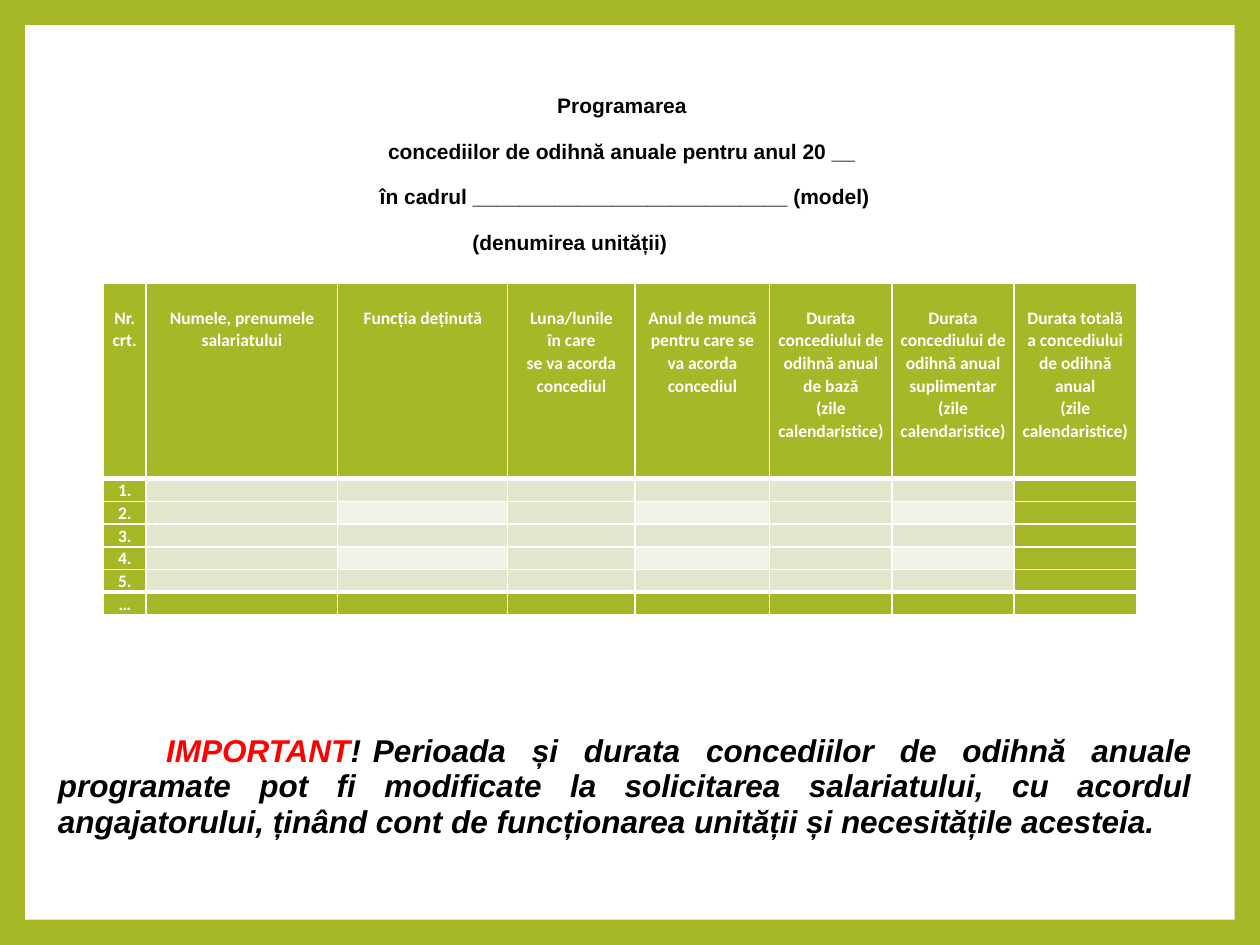
"""Build the annual leave schedule slide with its model table."""
from lxml import etree
from pptx import Presentation
from pptx.dml.color import RGBColor
from pptx.enum import shapes, text
from pptx.oxml import ns
from pptx.util import Inches, Pt

GREEN = RGBColor(0xA6, 0xB7, 0x27)
SAGE = RGBColor(0xE1, 0xE6, 0xCD)
PALE = RGBColor(0xF1, 0xF3, 0xE8)
WHITE = RGBColor(0xFF, 0xFF, 0xFF)
BLACK = RGBColor(0, 0, 0)
RED = RGBColor(0xFF, 0, 0)
CENTER = text.PP_ALIGN.CENTER


def write(para, content, font="Arial", size=12, color=BLACK, italic=False,
          align=CENTER, spacing=1.07, after=0):
    para.alignment = align
    para.line_spacing = spacing
    para.space_after = Pt(after)
    span = para.add_run()
    span.text = content
    span.font.name = font
    span.font.size = Pt(size)
    span.font.color.rgb = color
    span.font.bold = True
    span.font.italic = italic


def add_border(cell, side, width):
    props = cell._tc.get_or_add_tcPr()
    line = etree.SubElement(props, ns.qn(f"a:ln{side}"), w=str(Pt(width)))
    fill = etree.SubElement(line, ns.qn("a:solidFill"))
    etree.SubElement(fill, ns.qn("a:srgbClr"), val=str(WHITE))


deck = Presentation()
deck.slide_width, deck.slide_height = Inches(10), Inches(7.5)
page = deck.slides.add_slide(deck.slide_layouts[6])
page.background.fill.solid()
page.background.fill.fore_color.rgb = GREEN

panel = page.shapes.add_shape(shapes.MSO_SHAPE.RECTANGLE, Inches(0.2), Inches(0.2),
                              Inches(9.6), Inches(7.1))
panel.shadow.inherit = False
panel.fill.solid()
panel.fill.fore_color.rgb = WHITE
panel.line.fill.background()

frames = []
for top, height in ((0.72, 1.42), (5.82, 0.9)):
    box = page.shapes.add_textbox(Inches(0.46), Inches(top), Inches(9), Inches(height))
    frame = box.text_frame
    frame.word_wrap = True
    frame.margin_left = frame.margin_right = frame.margin_top = frame.margin_bottom = 0
    frames.append(frame)
title, notice = frames

TITLE_LINES = [
    "Programarea ",
    "concediilor de odihnă anuale pentru anul 20 __ ",
    "în cadrul ___________________________ (model)",
]
for index, line in enumerate(TITLE_LINES):
    para = title.add_paragraph() if index else title.paragraphs[0]
    write(para, line, after=10.7)
para = title.add_paragraph()
write(para, "(denumirea unității)", align=text.PP_ALIGN.LEFT)
para._p.get_or_add_pPr().set("marL", str(Inches(3.29)))

HEADERS = [
    ["Nr.", "crt."],
    ["Numele, prenumele", "salariatului"],
    ["Funcția deținută"],
    ["Luna/lunile", "în care", "se va acorda concediul"],
    ["Anul de muncă pentru care se va acorda concediul"],
    ["Durata concediului de odihnă anual de bază", "(zile calendaristice)"],
    ["Durata concediului de odihnă anual suplimentar", "(zile calendaristice)"],
    ["Durata totală a concediului de odihnă anual", "(zile calendaristice)"],
]
NUMBERS = ["1.", "2.", "3.", "4.", "5.", "…"]
WIDTHS = [0.34, 1.52, 1.35, 1.01, 1.07, 0.97, 0.97, 0.97]
HEIGHTS = [1.55] + [0.18] * len(NUMBERS)
last_row, last_column = len(NUMBERS), len(WIDTHS) - 1

table = page.shapes.add_table(len(HEIGHTS), len(WIDTHS), Inches(0.82), Inches(2.25),
                              Inches(sum(WIDTHS)), Inches(sum(HEIGHTS))).table
for column, width in zip(table.columns, WIDTHS):
    column.width = Inches(width)
for row, height in zip(table.rows, HEIGHTS):
    row.height = Inches(height)

for r in range(len(HEIGHTS)):
    for c in range(len(WIDTHS)):
        cell = table.cell(r, c)
        cell.margin_left = cell.margin_right = Inches(0.06)
        cell.margin_top = Inches(0 if r else 0.18)
        cell.margin_bottom = 0
        for side in "LRTB":
            heavy = (side == "B" and r in (0, last_row - 1)
                     or side == "T" and r in (1, last_row))
            add_border(cell, side, 3 if heavy else 1)
        cell.fill.solid()
        if r in (0, last_row) or c in (0, last_column):
            cell.fill.fore_color.rgb = GREEN
        else:
            cell.fill.fore_color.rgb = PALE if r % 2 == 0 and c % 2 == 0 else SAGE

        lines = HEADERS[c] if r == 0 else [NUMBERS[r - 1]] if c == 0 else []
        frame = cell.text_frame
        for index, line in enumerate(lines):
            para = frame.add_paragraph() if index else frame.paragraphs[0]
            write(para, line, font="Calibri", size=10, color=WHITE)
        if not lines:
            end = etree.SubElement(frame.paragraphs[0]._p, ns.qn("a:endParaRPr"))
            end.set("sz", "1000")

NOTICE_PARTS = [
    ("IMPORTANT", RED),
    ("!\tPerioada și durata concediilor de odihnă anuale programate pot fi modificate "
     "la solicitarea salariatului, cu acordul angajatorului, ținând cont de "
     "funcționarea unității și necesitățile acesteia.", BLACK),
]
para = notice.paragraphs[0]
for content, color in NOTICE_PARTS:
    write(para, content, size=18, color=color, italic=True,
          align=text.PP_ALIGN.JUSTIFY, spacing=0.95)
props = para._p.get_or_add_pPr()
props.set("marL", "0")
props.set("indent", str(Inches(0.86)))
tabs = etree.SubElement(props, ns.qn("a:tabLst"))
etree.SubElement(tabs, ns.qn("a:tab"), pos=str(Inches(2.94)), algn="l")

deck.save("out.pptx")
